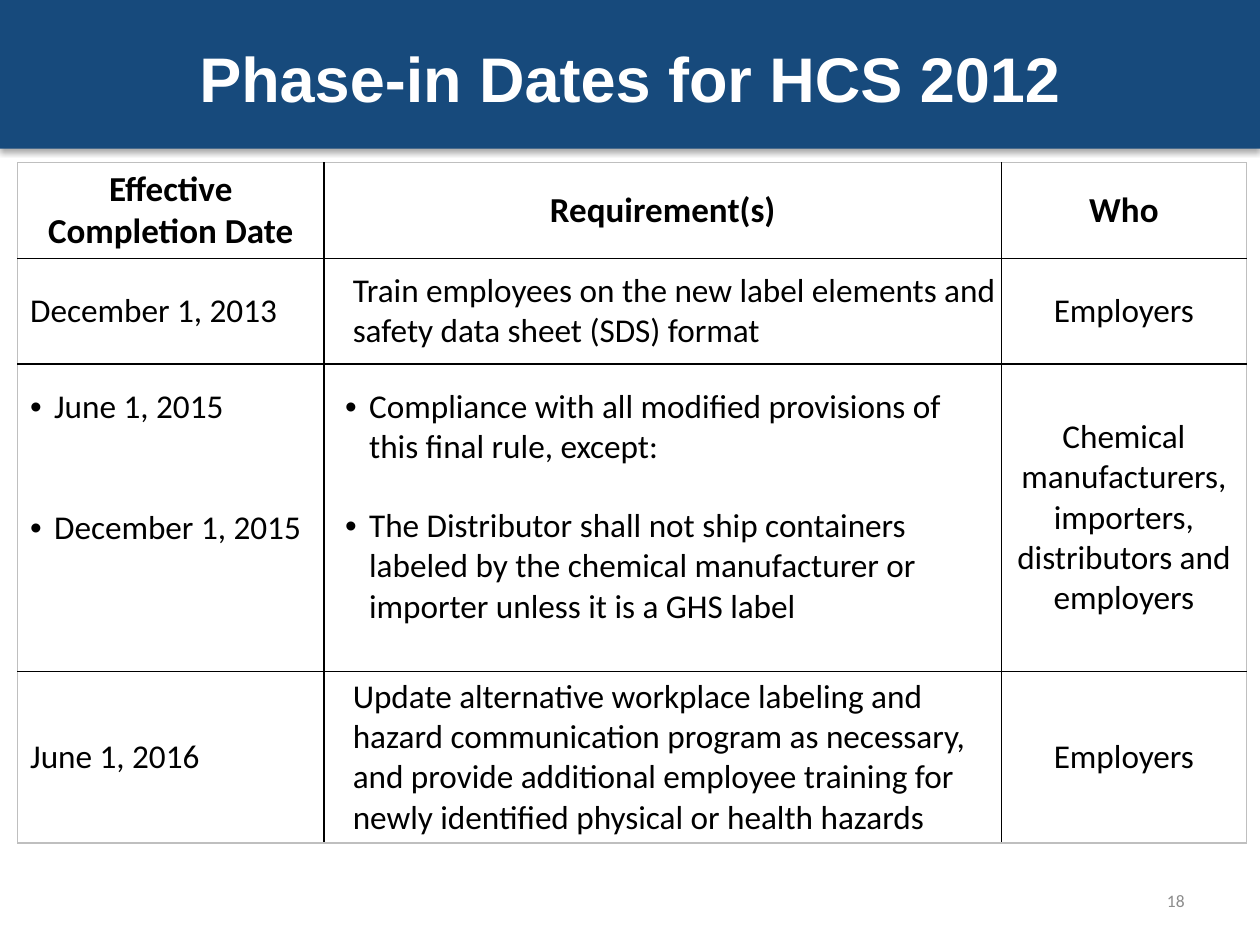
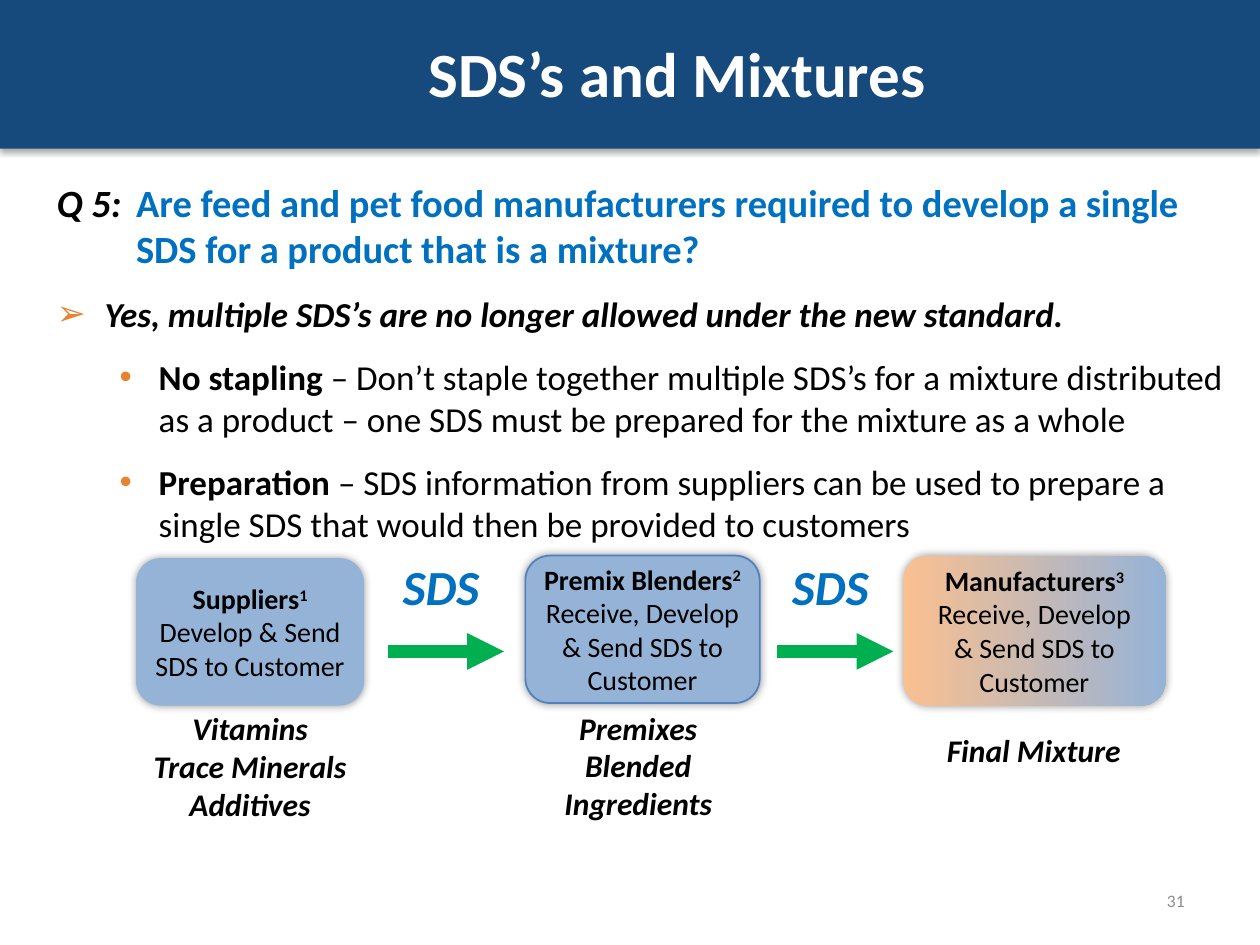
from lxml.etree import SubElement
from pptx import Presentation
from pptx.dml.color import RGBColor
from pptx.enum.shapes import MSO_CONNECTOR, MSO_SHAPE
from pptx.enum.text import MSO_ANCHOR, MSO_AUTO_SIZE, PP_ALIGN
from pptx.oxml.ns import qn
from pptx.util import Inches, Pt

COLORS = {
    "band": "174A7C", "white": "FFFFFF", "black": "000000", "number": "8C8C8C",
    "question": "0070C0", "bullet": "E7832F", "box": "95B3D7", "peach": "FAC090",
    "outline": "4F81BD", "arrow": "00B050", "table_edge": "BFBFBF",
}
RGB = {name: RGBColor.from_string(value) for name, value in COLORS.items()}


def add_run(paragraph, text, size, color="black", bold=False, italic=False, font="Calibri"):
    run = paragraph.add_run()
    run.text = text
    run.font.name = font
    run.font.size = Pt(size)
    run.font.bold = bold
    run.font.italic = italic
    run.font.color.rgb = RGB[color]
    return run


def set_indent(paragraph, left, first=0, bullet=None, bullet_color="black"):
    """Set the left and first-line indents in inches, and the bullet if there is one."""
    properties = paragraph._p.get_or_add_pPr()
    properties.set("marL", str(Inches(left)))
    properties.set("indent", str(Inches(first)))
    if bullet:
        color = SubElement(properties, qn("a:buClr"))
        SubElement(color, qn("a:srgbClr"), val=COLORS[bullet_color])
        SubElement(properties, qn("a:buFont"), typeface="Arial")
        SubElement(properties, qn("a:buChar"), char=bullet)
    else:
        SubElement(properties, qn("a:buNone"))


presentation = Presentation()
presentation.slide_width = Inches(10)
presentation.slide_height = Inches(7.5)
dates_slide = presentation.slides.add_slide(presentation.slide_layouts[5])
mixtures_slide = presentation.slides.add_slide(presentation.slide_layouts[1])
shadows = []  # shape, opacity %, blur pt, distance pt, angle

# Bands and titles
titles = [
    (dates_slide, "Phase-in Dates for HCS 2012", "Arial", (0, 0.17, 10, 0.89)),
    (mixtures_slide, "SDS’s and Mixtures", "Calibri", (0.58, 0.01, 9.59, 1.13)),
]
for slide, text, font, place in titles:
    band = slide.shapes.add_shape(
        MSO_SHAPE.RECTANGLE, 0, Inches(-0.01), Inches(10), Inches(1.19))
    band.fill.solid()
    band.fill.fore_color.rgb = RGB["band"]
    band.line.fill.background()
    slide.shapes._spTree.insert(2, band._element)
    shadows.append((band, 35, 3.1, 1.8, 90))

    title = slide.shapes.title
    title.left, title.top, title.width, title.height = map(Inches, place)
    title.text_frame.auto_size = MSO_AUTO_SIZE.NONE
    title.text_frame.vertical_anchor = MSO_ANCHOR.MIDDLE
    paragraph = title.text_frame.paragraphs[0]
    paragraph.alignment = PP_ALIGN.CENTER
    add_run(paragraph, text, 36, "white", bold=True, font=font)

# Table of dates
rows = [
    ["Effective\vCompletion Date", "Requirement(s)", "Who"],
    ["December 1, 2013",
     "Train employees on the new label elements and safety data sheet (SDS) format",
     "Employers"],
    [["June 1, 2015", "December 1, 2015"],
     ["Compliance with all modified provisions of this final rule, except:",
      "The Distributor shall not ship containers labeled by the chemical manufacturer "
      "or importer unless it is a GHS label"],
     "Chemical manufacturers, importers, distributors and employers"],
    ["June 1, 2016",
     "Update alternative workplace labeling and hazard communication program as "
     "necessary, and provide additional employee training for newly identified "
     "physical or health hazards",
     "Employers"],
]
column_widths = [2.43, 5.38, 1.94]
row_heights = [0.74, 0.84, 2.44, 1.34]
plain_indents = [0.06, 0.19, 0]
list_indents = [0.25, 0.32]
list_gaps = [46, 22]

table = dates_slide.shapes.add_table(
    len(rows), len(column_widths), Inches(0.14), Inches(1.29),
    Inches(sum(column_widths)), Inches(sum(row_heights))).table
table.first_row = table.horz_banding = False
for column, width in zip(table.columns, column_widths):
    column.width = Inches(width)
for row, height in zip(table.rows, row_heights):
    row.height = Inches(height)

last_row, last_column = len(rows) - 1, len(column_widths) - 1
for r, row in enumerate(rows):
    for c, content in enumerate(row):
        cell = table.cell(r, c)
        is_list = isinstance(content, list)
        is_header = r == 0
        cell.margin_left = cell.margin_right = Inches(0.04)
        cell.margin_top = Inches(0.18 if is_list else 0.04)
        cell.margin_bottom = Inches(0.04)
        cell.vertical_anchor = MSO_ANCHOR.TOP if is_list else MSO_ANCHOR.MIDDLE

        frame = cell.text_frame
        for index, text in enumerate(content if is_list else [content]):
            paragraph = frame.add_paragraph() if index else frame.paragraphs[0]
            if is_list:
                set_indent(paragraph, list_indents[c], -0.19, "•")
                if index:
                    paragraph.space_before = Pt(list_gaps[c])
            elif is_header or c == last_column:
                paragraph.alignment = PP_ALIGN.CENTER
            else:
                set_indent(paragraph, plain_indents[c])
            for part_number, part in enumerate(text.split("\v")):
                if part_number:
                    paragraph.add_line_break()
                add_run(paragraph, part, 20 if is_header else 19, bold=is_header)

        outer_edges = {"L": c == 0, "R": c == last_column, "T": r == 0, "B": r == last_row}
        properties = cell._tc.get_or_add_tcPr()
        for side, is_outer in outer_edges.items():
            border = SubElement(properties, qn(f"a:ln{side}"),
                                w=str(Pt(0.75 if is_outer else 1)))
            fill = SubElement(border, qn("a:solidFill"))
            SubElement(fill, qn("a:srgbClr"),
                       val=COLORS["table_edge" if is_outer else "black"])
        cell.fill.background()

# Question and answers: level, left, first line, bullet, runs
regular, bold = {"size": 20}, {"size": 20, "bold": True}
answers = [
    (0, 0.63, -0.63, None, [
        ("Q 5:\t", {"size": 22, "bold": True, "italic": True}),
        ("Are feed and pet food manufacturers required to develop a single SDS for a "
         "product that is a mixture?", {"size": 22, "color": "question", "bold": True})]),
    (0, 0.38, -0.38, "➢", [
        ("Yes, multiple SDS’s are no longer allowed under the new standard.",
         {"size": 20, "bold": True, "italic": True})]),
    (1, 0.81, -0.31, "•", [
        ("No stapling ", bold),
        ("– Don’t staple together multiple SDS’s for a mixture distributed as a product "
         "– one SDS must be prepared for the mixture as a whole", regular)]),
    (1, 0.81, -0.31, "•", [
        ("Preparation ", bold),
        ("– SDS information from suppliers can be used to prepare a single SDS that "
         "would then be provided to customers", regular)]),
]
body = mixtures_slide.placeholders[1]
body.left, body.top, body.width, body.height = map(Inches, (0.35, 1.37, 9.48, 4.84))
body.text_frame.auto_size = MSO_AUTO_SIZE.NONE
for index, (level, left, first, bullet, runs) in enumerate(answers):
    frame = body.text_frame
    paragraph = frame.add_paragraph() if index else frame.paragraphs[0]
    paragraph.level = level
    set_indent(paragraph, left, first, bullet, "bullet")
    paragraph.space_before = Pt(0)
    paragraph.space_after = Pt(12)
    for text, style in runs:
        add_run(paragraph, text, **style)

# Supply chain boxes
receive_lines = ["Receive, Develop", "& Send SDS to Customer"]
chain = [
    ("Suppliers", "1", ["Develop & Send SDS to Customer"], (1.08, 4.43, 1.81, 1.17)),
    ("Premix Blenders", "2", receive_lines, (4.17, 4.41, 1.86, 1.17)),
    ("Manufacturers", "3", receive_lines, (7.17, 4.41, 2.08, 1.19)),
]
for name, note, lines, place in chain:
    box = mixtures_slide.shapes.add_shape(MSO_SHAPE.ROUNDED_RECTANGLE, *map(Inches, place))
    if name == "Manufacturers":
        box.fill.gradient()
        box.fill.gradient_angle = 0
        for stop, color, position in zip(box.fill.gradient_stops, ("peach", "box"), (0, 1)):
            stop.color.rgb = RGB[color]
            stop.position = position
    else:
        box.fill.solid()
        box.fill.fore_color.rgb = RGB["box"]
    if name == "Premix Blenders":
        box.line.color.rgb = RGB["outline"]
        box.line.width = Pt(1)
    else:
        box.line.fill.background()
    shadows.append((box, 40, 5, 0, 0))

    frame = box.text_frame
    frame.word_wrap = True
    frame.vertical_anchor = MSO_ANCHOR.MIDDLE
    frame.margin_left = frame.margin_right = frame.margin_top = frame.margin_bottom = 0
    heading = frame.paragraphs[0]
    heading.alignment = PP_ALIGN.CENTER
    add_run(heading, name, 16, bold=True)
    add_run(heading, note, 16, bold=True).font._element.set("baseline", "30000")
    for line in lines:
        paragraph = frame.add_paragraph()
        paragraph.alignment = PP_ALIGN.CENTER
        add_run(paragraph, line, 16)

# Arrows
arrow_starts = [3.08, 6.17]
arrow_length = 0.92
for start in arrow_starts:
    arrow = mixtures_slide.shapes.add_connector(
        MSO_CONNECTOR.STRAIGHT, Inches(start), Inches(5.17),
        Inches(start + arrow_length), Inches(5.17))
    arrow.line.color.rgb = RGB["arrow"]
    arrow.line.width = Pt(7)
    SubElement(arrow.line._get_or_add_ln(), qn("a:tailEnd"), type="triangle")
    SubElement(arrow._element.spPr, qn("a:effectLst"))

# Captions, arrow labels and slide numbers
caption_style = {"size": 18, "bold": True, "italic": True}
label_style = {"size": 28, "color": "question", "bold": True, "italic": True}
number_style = {"size": 10, "color": "number"}
number_place = (7.17, 6.95, 2.33, 0.4)
text_boxes = [
    (mixtures_slide, ["Vitamins", "Trace Minerals", "Additives"],
     (0.9, 5.54, 2.17, 1.08), caption_style),
    (mixtures_slide, ["Premixes", "Blended", "Ingredients"],
     (3.94, 5.46, 2.25, 1.23), caption_style),
    (mixtures_slide, ["Final Mixture"], (7.08, 5.61, 2.25, 0.68), caption_style),
    (dates_slide, ["18"], number_place, number_style),
    (mixtures_slide, ["31"], number_place, number_style),
]
for start in arrow_starts:
    text_boxes.append(
        (mixtures_slide, ["SDS"], (start - 0.04, 4.35, arrow_length, 0.6), label_style))

for slide, lines, place, style in text_boxes:
    frame = slide.shapes.add_textbox(*map(Inches, place)).text_frame
    frame.word_wrap = True
    frame.vertical_anchor = MSO_ANCHOR.MIDDLE
    paragraph = frame.paragraphs[0]
    paragraph.alignment = PP_ALIGN.RIGHT if style is number_style else PP_ALIGN.CENTER
    for index, line in enumerate(lines):
        if index:
            paragraph.add_line_break()
        add_run(paragraph, line, **style)

# Shadows
for shape, opacity, blur, distance, angle in shadows:
    shape.shadow.inherit = False
    effects = shape._element.spPr.find(qn("a:effectLst"))
    shadow = SubElement(effects, qn("a:outerShdw"), blurRad=str(Pt(blur)),
                        dist=str(Pt(distance)), dir=str(angle * 60000), rotWithShape="0")
    color = SubElement(shadow, qn("a:srgbClr"), val=COLORS["black"])
    SubElement(color, qn("a:alpha"), val=str(opacity * 1000))

presentation.save("out.pptx")
